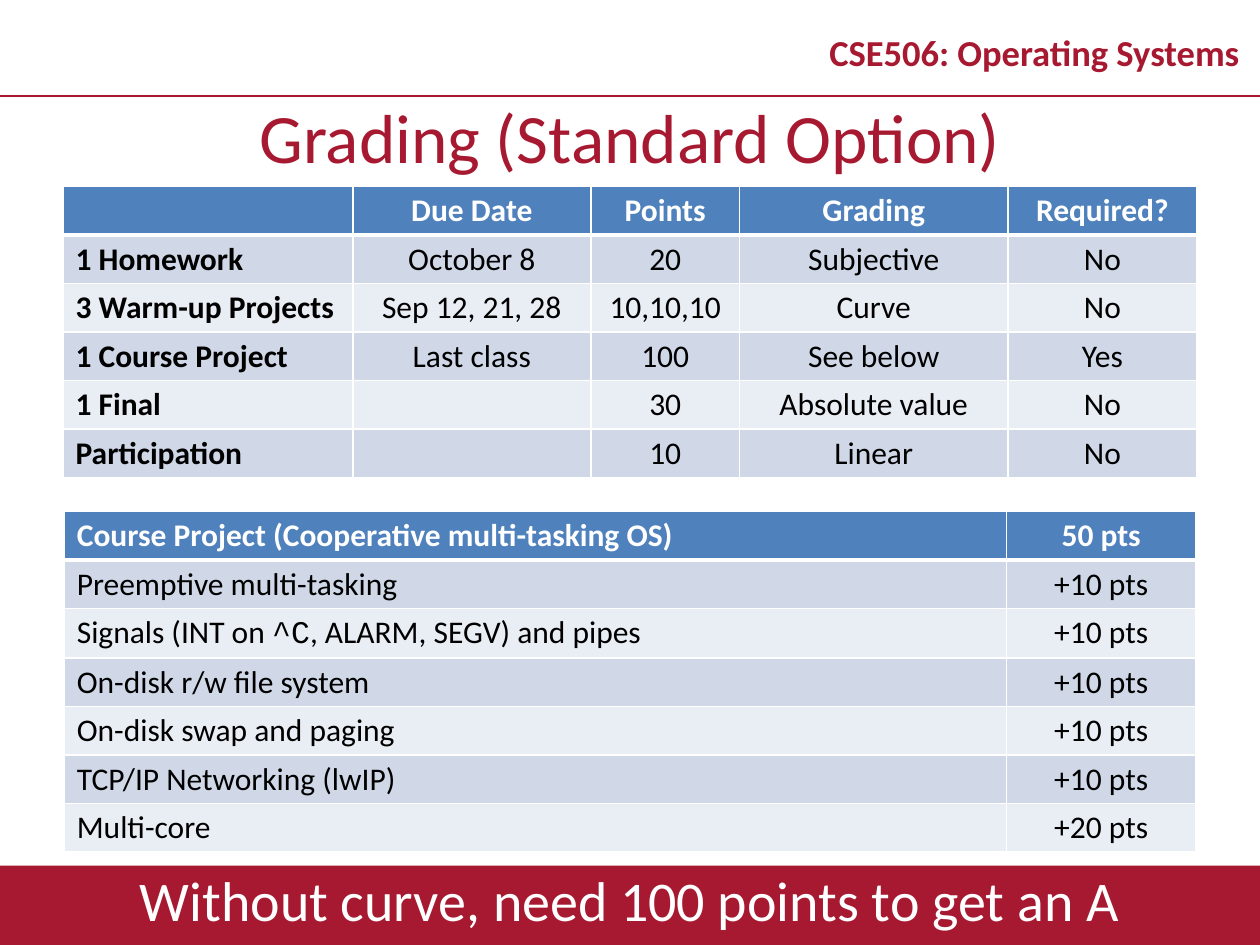
from lxml.etree import SubElement
from pptx import Presentation
from pptx.dml.color import RGBColor
from pptx.enum.shapes import MSO_CONNECTOR, MSO_SHAPE
from pptx.enum.text import MSO_ANCHOR, MSO_AUTO_SIZE, PP_ALIGN
from pptx.oxml.ns import qn
from pptx.util import Inches, Pt

CRIMSON = RGBColor(0xA7, 0x19, 0x30)
BLUE = RGBColor(0x4F, 0x81, 0xBD)
DARK_STRIPE = RGBColor(0xD0, 0xD8, 0xE8)
LIGHT_STRIPE = RGBColor(0xE9, 0xED, 0xF4)
WHITE = RGBColor(0xFF, 0xFF, 0xFF)
BLACK = RGBColor(0, 0, 0)
BODY_FONT, CODE_FONT = "Calibri", "Courier New"

# Content: a cell is a string, or a list of (text, font) pairs
COURSE = "CSE506: Operating Systems"
TITLE = "Grading (Standard Option)"
SUMMARY = "Without curve, need 100 points to get an A"
GRADING = [
    ("", "Due Date", "Points", "Grading", "Required?"),
    ("1 Homework", "October 8", "20", "Subjective", "No"),
    ("3 Warm-up Projects", "Sep 12, 21, 28", "10,10,10", "Curve", "No"),
    ("1 Course Project", "Last class", "100", "See below", "Yes"),
    ("1 Final", "", "30", "Absolute value", "No"),
    ("Participation", "", "10", "Linear", "No"),
]
SIGNALS = [("Signals (INT on ", BODY_FONT), ("^C", CODE_FONT),
           (", ALARM, SEGV) and pipes", BODY_FONT)]
PROJECT = [
    ("Course Project (Cooperative multi-tasking OS)", "50 pts"),
    ("Preemptive multi-tasking", "+10 pts"),
    (SIGNALS, "+10 pts"),
    ("On-disk r/w file system", "+10 pts"),
    ("On-disk swap and paging", "+10 pts"),
    ("TCP/IP Networking (lwIP)", "+10 pts"),
    ("Multi-core", "+20 pts"),
]

# Layout in inches
WIDTH, HEIGHT = 10, 7.5
BAR = 0.63
RULE_TOP = 0.76
ROW = 0.385


def write(paragraph, content, align, size, color, bold=False):
    paragraph.alignment = align
    pieces = [(content, BODY_FONT)] if isinstance(content, str) else content
    for text, font in pieces:
        if not text:
            continue
        span = paragraph.add_run()
        span.text = text
        span.font.color.rgb = color
        for name, value in {"name": font, "size": Pt(size), "bold": bold}.items():
            setattr(span.font, name, value)


def place(box, left, top, width, height):
    frame = {"left": left, "top": top, "width": width, "height": height}
    for name, value in frame.items():
        setattr(box, name, Inches(value))


def fill_frame(box, content, size, color, anchor, bold=False):
    frame = box.text_frame
    settings = {"word_wrap": True, "auto_size": MSO_AUTO_SIZE.NONE,
                "vertical_anchor": anchor}
    for name, value in settings.items():
        setattr(frame, name, value)
    write(frame.paragraphs[0], content, PP_ALIGN.CENTER, size, color, bold)
    return frame.paragraphs[0]


def add_borders(cell, bottom):
    properties = cell._tc.get_or_add_tcPr()
    for side, points in {"L": 1, "R": 1, "T": 1, "B": bottom}.items():
        line = SubElement(properties, qn(f"a:ln{side}"), w=str(Pt(points)))
        solid = SubElement(line, qn("a:solidFill"))
        SubElement(solid, qn("a:srgbClr"), val=str(WHITE))


def add_grid(page, rows, left, top, columns, bold_labels):
    shape = page.shapes.add_table(
        len(rows), len(columns), Inches(left), Inches(top),
        Inches(sum(columns)), Inches(ROW * len(rows)))
    table = shape.table
    for column, width in zip(table.columns, columns):
        column.width = Inches(width)
    for r, row in enumerate(rows):
        table.rows[r].height = Inches(ROW)
        header = r == 0
        stripe = BLUE if header else (LIGHT_STRIPE, DARK_STRIPE)[r % 2]
        for c, content in enumerate(row):
            cell = table.cell(r, c)
            cell.margin_top = cell.margin_bottom = Inches(0.04)
            add_borders(cell, bottom=3 if header or r == 0 else 1)
            cell.fill.solid()
            cell.fill.fore_color.rgb = stripe
            write(cell.text_frame.paragraphs[0], content,
                  PP_ALIGN.CENTER if c else PP_ALIGN.LEFT, 18,
                  WHITE if header else BLACK,
                  header or (bold_labels and c == 0))


deck = Presentation()
deck.slide_width, deck.slide_height = Inches(WIDTH), Inches(HEIGHT)
page = deck.slides.add_slide(deck.slide_layouts[5])

# Footer band
band = page.shapes.add_shape(
    MSO_SHAPE.RECTANGLE, 0, Inches(HEIGHT - BAR), Inches(WIDTH), Inches(BAR))
band.shadow.inherit = False
band.fill.solid()
band.fill.fore_color.rgb = CRIMSON
band.line.fill.background()

# Header rule and course name
rule = page.shapes.add_connector(
    MSO_CONNECTOR.STRAIGHT, 0, Inches(RULE_TOP), Inches(WIDTH), Inches(RULE_TOP))
rule.line.color.rgb = CRIMSON
rule.line.width = Pt(1)
SubElement(rule._element.spPr, qn("a:effectLst"))

course = page.shapes.add_textbox(
    Inches(6.42), Inches(RULE_TOP - BAR), Inches(WIDTH - 6.42), Inches(BAR))
fill_frame(course, COURSE, 20.9, CRIMSON, MSO_ANCHOR.MIDDLE, True).line_spacing = 0.8

# Title
title = page.shapes.title
place(title, 0, RULE_TOP, WIDTH, BAR)
fill_frame(title, TITLE, 39.6, CRIMSON, MSO_ANCHOR.MIDDLE)

# Tables
add_grid(page, GRADING, 0.5, 1.48, (2.3, 1.89, 1.18, 2.13, 1.5), True)
add_grid(page, PROJECT, 0.51, 4.06, (7.48, 1.5), False)

# Summary over the footer band
summary = page.shapes.add_textbox(0, Inches(6.82), Inches(WIDTH), Inches(BAR))
fill_frame(summary, SUMMARY, 32, WHITE, MSO_ANCHOR.TOP)

deck.save("out.pptx")
